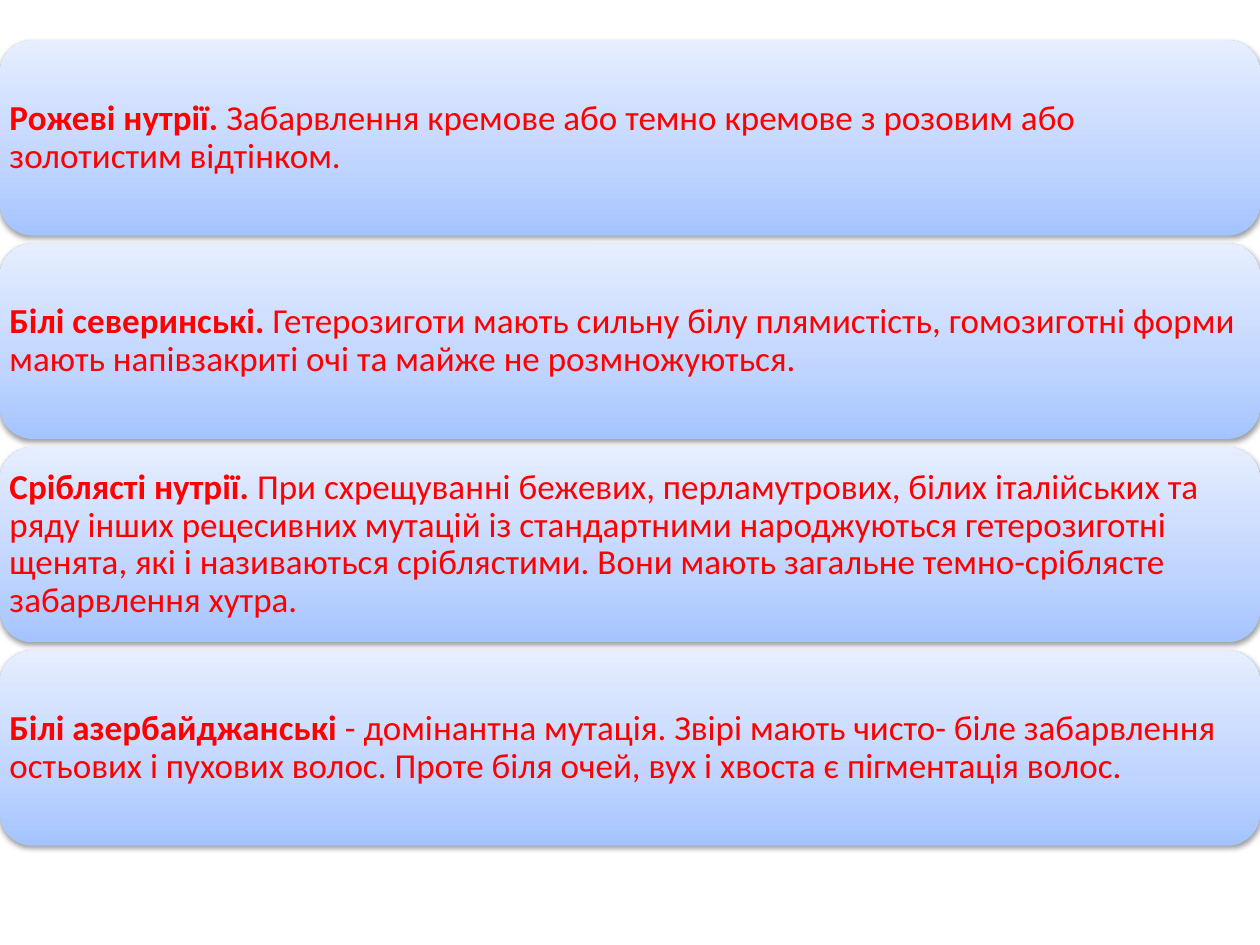
from lxml import etree
from pptx import Presentation
from pptx import util as u
from pptx.dml.color import RGBColor
from pptx.enum import shapes, text
from pptx.oxml import ns

COLOURS = {
    "text": "FF0000",
    "bottom": "A4C4FF",
    "middle": "BFD4FF",
    "top": "E6EEFF",
    "shadow": "000000",
}
GRADIENT = [(0, "bottom"), (35, "middle"), (100, "top")]
WIDTH, HEIGHT = u.Cm(25.4), u.Cm(19.05)
FIRST_TOP, PANEL_HEIGHT, PITCH = u.Cm(0.81), u.Cm(3.94), u.Cm(4.1)

BREEDS = [
    ("Рожеві нутрії. ",
     "Забарвлення кремове або темно кремове з розовим або золотистим відтінком."),
    ("Білі северинські. ",
     "Гетерозиготи мають сильну білу плямистість, гомозиготні форми мають "
     "напівзакриті очі та майже не розмножуються."),
    ("Сріблясті нутрії. ",
     "При схрещуванні бежевих, перламутрових, білих італійських та ряду інших "
     "рецесивних мутацій із стандартними народжуються гетерозиготні щенята, які "
     "і називаються сріблястими. Вони мають загальне темно-сріблясте забарвлення хутра."),
    ("Білі азербайджанські ",
     "- домінантна мутація. Звірі мають чисто- біле забарвлення остьових і пухових "
     "волос. Проте біля очей, вух і хвоста є пігментація волос."),
]


def add_element(parent, tag, **attributes):
    return etree.SubElement(parent, ns.qn(tag), attributes)


def add_colour(parent, name):
    return add_element(parent, "a:srgbClr", val=COLOURS[name])


def set_gradient(panel):
    panel.fill.gradient()
    panel.fill.gradient_angle = 90
    stops = panel.element.spPr.find(".//" + ns.qn("a:gsLst"))
    for stop in list(stops):
        stops.remove(stop)
    for percent, name in GRADIENT:
        add_colour(add_element(stops, "a:gs", pos=str(percent * 1000)), name)


def set_shadow(panel):
    panel.shadow.inherit = False
    effects = panel.element.spPr.find(ns.qn("a:effectLst"))
    shadow = add_element(effects, "a:outerShdw", blurRad="40000", dist="20000",
                         dir="5400000", rotWithShape="0")
    add_element(add_colour(shadow, "shadow"), "a:alpha", val="38000")


def add_span(para, words, size=20, bold=False, colour="text", font="Calibri"):
    span = para.add_run()
    span.text = words
    span.font.size = u.Pt(size)
    span.font.bold = bold
    span.font.name = font
    span.font.color.rgb = RGBColor.from_string(COLOURS[colour])


def add_panel(page, top, name, description):
    panel = page.shapes.add_shape(
        shapes.MSO_SHAPE.ROUNDED_RECTANGLE, 0, top, WIDTH, PANEL_HEIGHT)
    panel.line.fill.background()
    set_gradient(panel)
    set_shadow(panel)
    frame = panel.text_frame
    frame.word_wrap = True
    frame.vertical_anchor = text.MSO_ANCHOR.MIDDLE
    frame.margin_left = frame.margin_right = 0
    frame.margin_top = frame.margin_bottom = 0
    para = frame.paragraphs[0]
    para.alignment = text.PP_ALIGN.LEFT
    para.line_spacing = 0.9
    add_span(para, name, bold=True)
    add_span(para, description)


def main():
    deck = Presentation()
    deck.slide_width, deck.slide_height = WIDTH, HEIGHT
    page = deck.slides.add_slide(deck.slide_layouts.get_by_name("Blank"))
    for index, (name, description) in enumerate(BREEDS):
        add_panel(page, FIRST_TOP + index * PITCH, name, description)
    deck.save("out.pptx")


if __name__ == "__main__":
    main()
